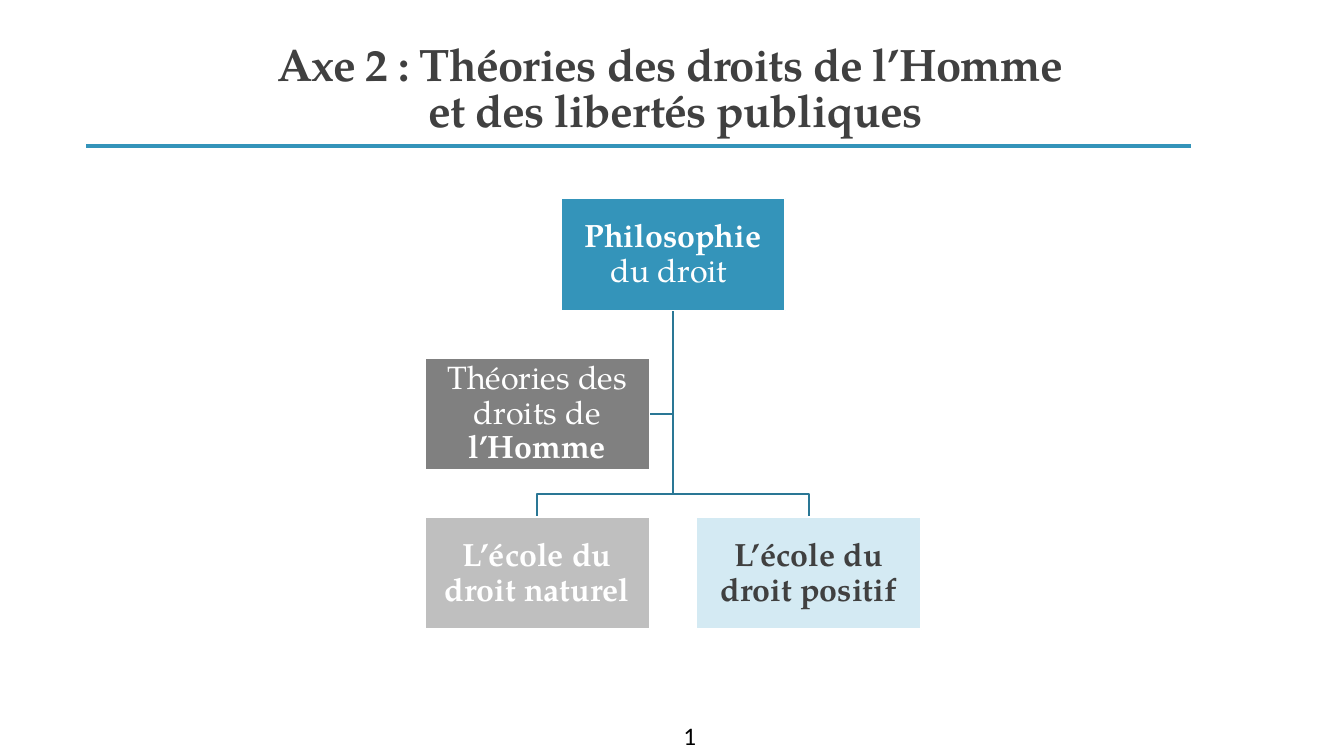
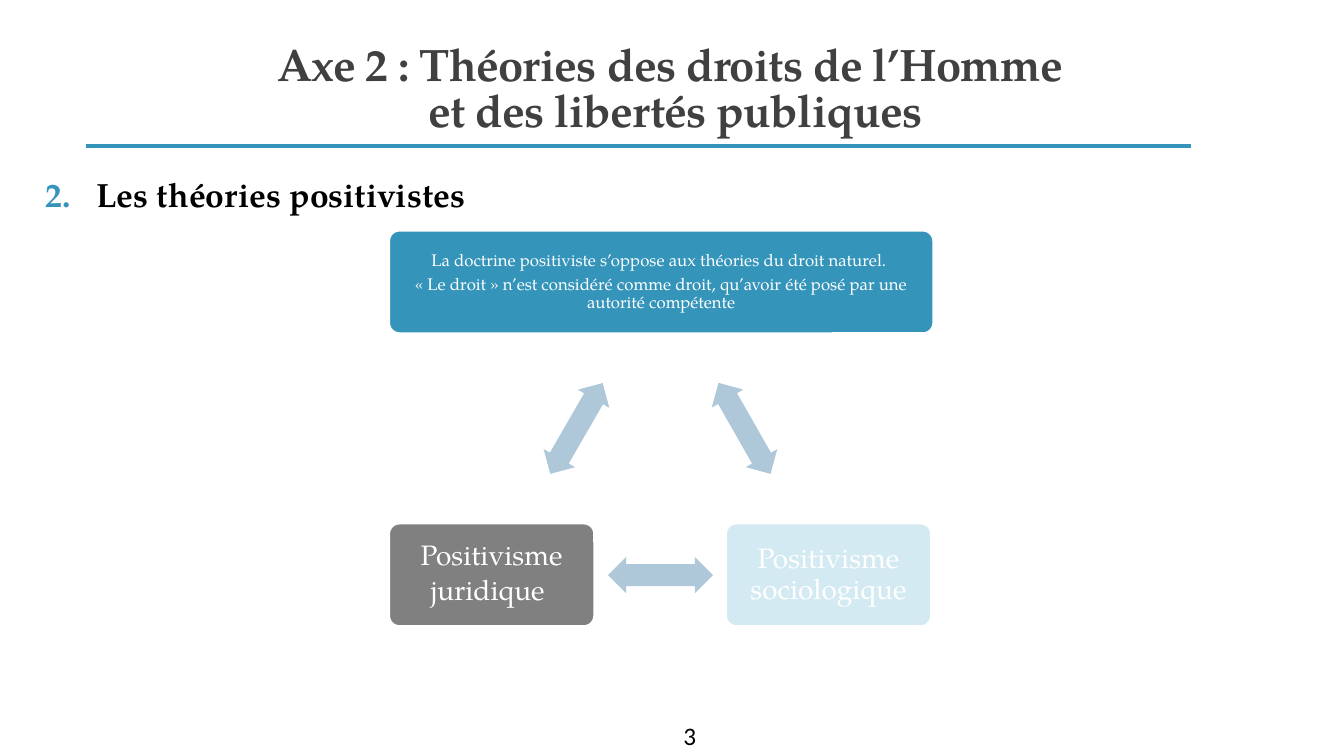
from lxml import etree
from pptx import Presentation
from pptx.dml.color import RGBColor
from pptx.enum import shapes, text
from pptx.oxml import ns
from pptx.util import Pt

BLUE = RGBColor(0x34, 0x94, 0xBA)
DEEP = RGBColor(0x2A, 0x77, 0x95)
PALE = RGBColor(0xD4, 0xEA, 0xF3)
STEEL = RGBColor(0xAE, 0xC8, 0xD9)
GRAY = RGBColor(0x80, 0x80, 0x80)
SILVER = RGBColor(0xBF, 0xBF, 0xBF)
DARK = RGBColor(0x40, 0x40, 0x40)
BLACK = RGBColor(0, 0, 0)
WHITE = RGBColor(0xFF, 0xFF, 0xFF)

SERIF, SANS = "TeX Gyre Pagella", "Calibri"
TITLE = "Axe 2 : Théories des droits de l’Homme \vet des libertés publiques"
MID = text.MSO_ANCHOR.MIDDLE
LOW = text.MSO_ANCHOR.BOTTOM
CENTER = text.PP_ALIGN.CENTER
KIND = shapes.MSO_SHAPE


class Deck:
    """Holds the shared style and the current slide."""

    def __init__(self):
        self.prs = Presentation()
        self.prs.slide_width, self.prs.slide_height = Pt(960), Pt(540)

    def start(self, number):
        """Add a slide with its title, rule and page number."""
        self.slide = self.prs.slides.add_slide(self.prs.slide_layouts[6])
        title = self.label(86.4, 22.3, 792, 79.2, TITLE, 32.4, DARK, bold=True)
        title.text_frame.vertical_anchor = LOW
        para = title.text_frame.paragraphs[0]
        para.alignment, para.line_spacing = CENTER, 0.85
        for run in para.runs:
            run.font._element.set("spc", "-50")
        self.line(61.7, 104.4, 851, 104.4, BLUE, 3)
        self.label(481, 511.2, 90, 28.8, number, 18, BLACK, SANS)

    def style(self, font, size, color, name=SERIF, bold=False):
        font.size, font.name, font.bold = Pt(size), name, bold
        font.color.rgb = color

    def label(self, x, y, w, h, words, size, color, name=SERIF, bold=False):
        """Add a plain text box."""
        box = self.slide.shapes.add_textbox(Pt(x), Pt(y), Pt(w), Pt(h))
        box.text_frame.word_wrap = True
        box.text_frame.text = words
        for run in box.text_frame.paragraphs[0].runs:
            self.style(run.font, size, color, name, bold)
        return box

    def head(self, words, first):
        """Add a numbered heading."""
        box = self.label(32.6, 123.8, 846, 36, words, 24, BLACK, bold=True)
        box.text_frame.margin_left = box.text_frame.margin_right = 0
        para = box.text_frame.paragraphs[0]
        para.line_spacing = 0.9
        props = para._p.get_or_add_pPr()
        props.set("marL", str(Pt(36)))
        props.set("indent", str(-Pt(36)))
        tint = etree.SubElement(props, ns.qn("a:buClr"))
        etree.SubElement(tint, ns.qn("a:srgbClr"), val=str(BLUE))
        etree.SubElement(props, ns.qn("a:buAutoNum"),
                         type="arabicPeriod", startAt=str(first))

    def shape(self, kind, x, y, w, h, fill):
        item = self.slide.shapes.add_shape(kind, Pt(x), Pt(y), Pt(w), Pt(h))
        item.shadow.inherit = False
        item.fill.solid()
        item.fill.fore_color.rgb = fill
        return item

    def card(self, kind, x, y, w, h, fill, paras, size, color=WHITE, pad=1.4):
        """Add a filled box; each paragraph is a list of (words, bold)."""
        item = self.shape(kind, x, y, w, h, fill)
        item.line.color.rgb, item.line.width = WHITE, Pt(1.25)
        if kind == KIND.ROUNDED_RECTANGLE:
            item.adjustments[0] = 0.1
        frame = item.text_frame
        frame.word_wrap, frame.vertical_anchor = True, MID
        frame.margin_left = frame.margin_right = Pt(pad)
        frame.margin_top = frame.margin_bottom = Pt(pad)
        for i, parts in enumerate(paras):
            para = frame.add_paragraph() if i else frame.paragraphs[0]
            para.alignment, para.line_spacing = CENTER, 0.9
            para.space_after = Pt(0.35 * size)
            for words, bold in parts:
                run = para.add_run()
                run.text = words
                self.style(run.font, size, color, bold=bold)
        return item

    def arrow(self, x, y, turn):
        """Add a double arrow centred on a point."""
        w, h = 74.9, 25.9
        item = self.shape(KIND.LEFT_RIGHT_ARROW, x - w / 2, y - h / 2, w, h, STEEL)
        item.line.fill.background()
        item.adjustments[0], item.adjustments[1] = 0.6, 0.5
        item.rotation = turn

    def line(self, x1, y1, x2, y2, color, width):
        item = self.slide.shapes.add_connector(
            shapes.MSO_CONNECTOR.STRAIGHT, Pt(x1), Pt(y1), Pt(x2), Pt(y2))
        item.line.color.rgb, item.line.width = color, Pt(width)
        etree.SubElement(item._element.spPr, ns.qn("a:effectLst"))

    def bend(self, *spots):
        """Add an open line with square corners."""
        first, *rest = [(Pt(x), Pt(y)) for x, y in spots]
        pen = self.slide.shapes.build_freeform(*first)
        pen.add_line_segments(rest, close=False)
        item = pen.convert_to_shape()
        item.shadow.inherit = False
        item.fill.background()
        item.line.color.rgb, item.line.width = DEEP, Pt(1.25)


def tree(deck):
    deck.start("1")
    w, h, mid, step = 160.4, 80, 480.8, 97
    left, right = mid - step, mid + step
    top, side, rail, low = 141.8, 255.6, 352.8, 369.5

    # Links
    foot, level = top + h, side + h / 2
    deck.bend((mid, foot), (mid, level), (left + w / 2, level))
    for x in (right, left):
        deck.bend((mid, foot), (mid, rail), (x, rail), (x, low))

    # Boxes
    for x, y, fill, color, parts in (
        (mid, top, BLUE, WHITE, [("Philosophie", True), (" du droit ", False)]),
        (left, low, SILVER, WHITE, [("L’école du droit naturel", True)]),
        (right, low, PALE, DARK, [("L’école du droit positif", True)]),
        (left, side, GRAY, WHITE,
         [("Théories des droits de ", False), ("l’Homme", True)]),
    ):
        deck.card(KIND.RECTANGLE, x - w / 2, y, w, h, fill, [parts], 23, color)


def cycle(deck):
    deck.start("3")
    deck.head("Les théories positivistes", 2)
    kind, left, w, h, low = KIND.ROUNDED_RECTANGLE, 278, 146.4, 73.2, 374

    # Doctrine and its two branches
    deck.card(kind, left, 164.8, 388.6, h, BLUE, [
        [("La doctrine positiviste s’oppose aux théories du droit naturel. ", False)],
        [("« Le droit » n’est considéré comme droit, qu’avoir été posé "
          "par une autorité compétente", False)],
    ], 12, pad=5.6)
    law = deck.card(kind, left, low, w, h, GRAY,
                    [[("Positivisme juridique", False), (" ", False)]], 20, pad=7.8)
    deck.style(law.text_frame.paragraphs[0].runs[1].font, 24, WHITE, SANS)
    deck.card(kind, 518.6, low, w, h, PALE,
              [[("Positivisme sociologique", False)]], 20, pad=7.8)

    # Arrows
    mid, step = 471.8, 60
    for x, y, turn in ((mid + step, 306, 60.3), (mid, 410.8, 180),
                       (mid - step, 306, 300)):
        deck.arrow(x, y, turn)


def main():
    deck = Deck()
    tree(deck)
    cycle(deck)
    deck.prs.save("out.pptx")


if __name__ == "__main__":
    main()
